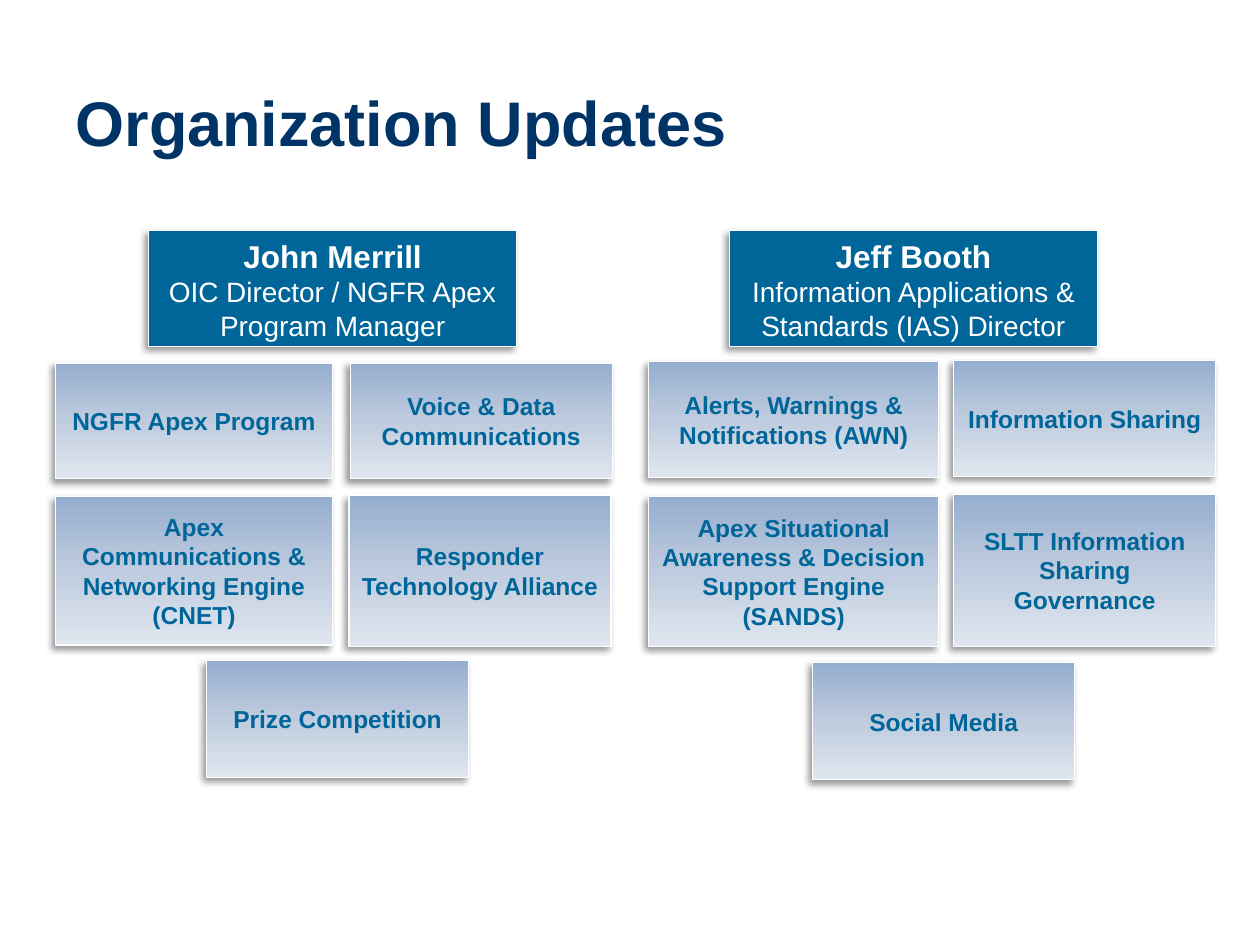
from pptx import Presentation
from pptx.dml.color import RGBColor as RGB
from pptx.enum.shapes import MSO_SHAPE as Kind
from pptx.enum.text import MSO_ANCHOR as Anchor, PP_ALIGN as Align
from pptx.oxml import parse_xml as to_xml
from pptx.oxml.ns import qn
from pptx.util import Inches, Pt

NS = 'xmlns:a="http://schemas.openxmlformats.org/drawingml/2006/main"'
BLUE, NAVY, WHITE = "006699", "003366", "FFFFFF"
STOPS = [(0, "95ADCF"), (50, "BFCCDF"), (100, "E0E6EF")]


def write(frame, lines, color=BLUE, align=Align.CENTER, anchor=Anchor.MIDDLE):
    frame.word_wrap = True
    frame.vertical_anchor = anchor
    for i, (text, size, bold) in enumerate(lines):
        para = frame.add_paragraph() if i else frame.paragraphs[0]
        para.alignment = align
        run = para.add_run()
        run.text = text
        run.font.name = "Arial"
        run.font.size = Pt(size)
        run.font.bold = bold
        run.font.color.rgb = RGB.from_string(color)


def add_box(left, top, width, height):
    box = slide.shapes.add_shape(Kind.RECTANGLE, *map(Inches, (left, top, width, height)))
    box.fill.solid()
    box.fill.fore_color.rgb = RGB.from_string(BLUE)
    box.line.color.rgb = RGB.from_string(WHITE)
    box.line.width = Pt(0.75)
    box.shadow.inherit = False
    box._element.spPr.find(qn("a:effectLst")).append(to_xml(
        f'<a:outerShdw {NS} blurRad="{Pt(4)}" dist="{Pt(3)}" dir="8100000" rotWithShape="0">'
        '<a:srgbClr val="000000"><a:alpha val="40000"/></a:srgbClr></a:outerShdw>'))
    return box


deck = Presentation()
deck.slide_width, deck.slide_height = Inches(10), Inches(7.5)
slide = deck.slides.add_slide(deck.slide_layouts[5])

title = slide.shapes.title
title.left, title.top = Inches(0.5), Inches(0.48)
title.width, title.height = Inches(9.25), Inches(0.83)
write(title.text_frame, [("Organization Updates", 36, True)],
      color=NAVY, align=Align.LEFT, anchor=Anchor.BOTTOM)

heads = [
    (1.18, "John Merrill", "OIC Director / NGFR Apex Program Manager"),
    (5.79, "Jeff Booth", "Information Applications & Standards (IAS) Director"),
]
for left, name, role in heads:
    box = add_box(left, 1.83, 2.92, 0.92)
    write(box.text_frame, [(name, 18, True), (role, 16, False)],
          color=WHITE, anchor=Anchor.TOP)

units = [
    (0.44, 2.88, 2.2, 0.92, "NGFR Apex Program"),
    (2.78, 2.88, 2.08, 0.92, "Voice & Data Communications"),
    (0.44, 3.94, 2.2, 1.18, "Apex Communications & Networking Engine (CNET)"),
    (2.77, 3.93, 2.08, 1.2, "Responder Technology Alliance"),
    (1.64, 5.24, 2.08, 0.93, "Prize Competition"),
    (5.15, 2.87, 2.3, 0.92, "Alerts, Warnings & Notifications (AWN)"),
    (7.57, 2.86, 2.08, 0.92, "Information Sharing"),
    (5.15, 3.94, 2.3, 1.19, "Apex Situational Awareness & Decision Support Engine (SANDS)"),
    (7.57, 3.92, 2.08, 1.21, "SLTT Information Sharing Governance"),
    (6.45, 5.26, 2.08, 0.93, "Social Media"),
]
marks = "".join(f'<a:gs pos="{pos * 1000}"><a:srgbClr val="{color}"/></a:gs>'
                for pos, color in STOPS)
for *place, text in units:
    box = add_box(*place)
    props = box._element.spPr
    props.replace(props.find(qn("a:solidFill")), to_xml(
        f'<a:gradFill {NS} rotWithShape="1"><a:gsLst>{marks}</a:gsLst>'
        '<a:lin ang="5400000" scaled="0"/></a:gradFill>'))
    write(box.text_frame, [(text, 14, True)])

deck.save("out.pptx")
